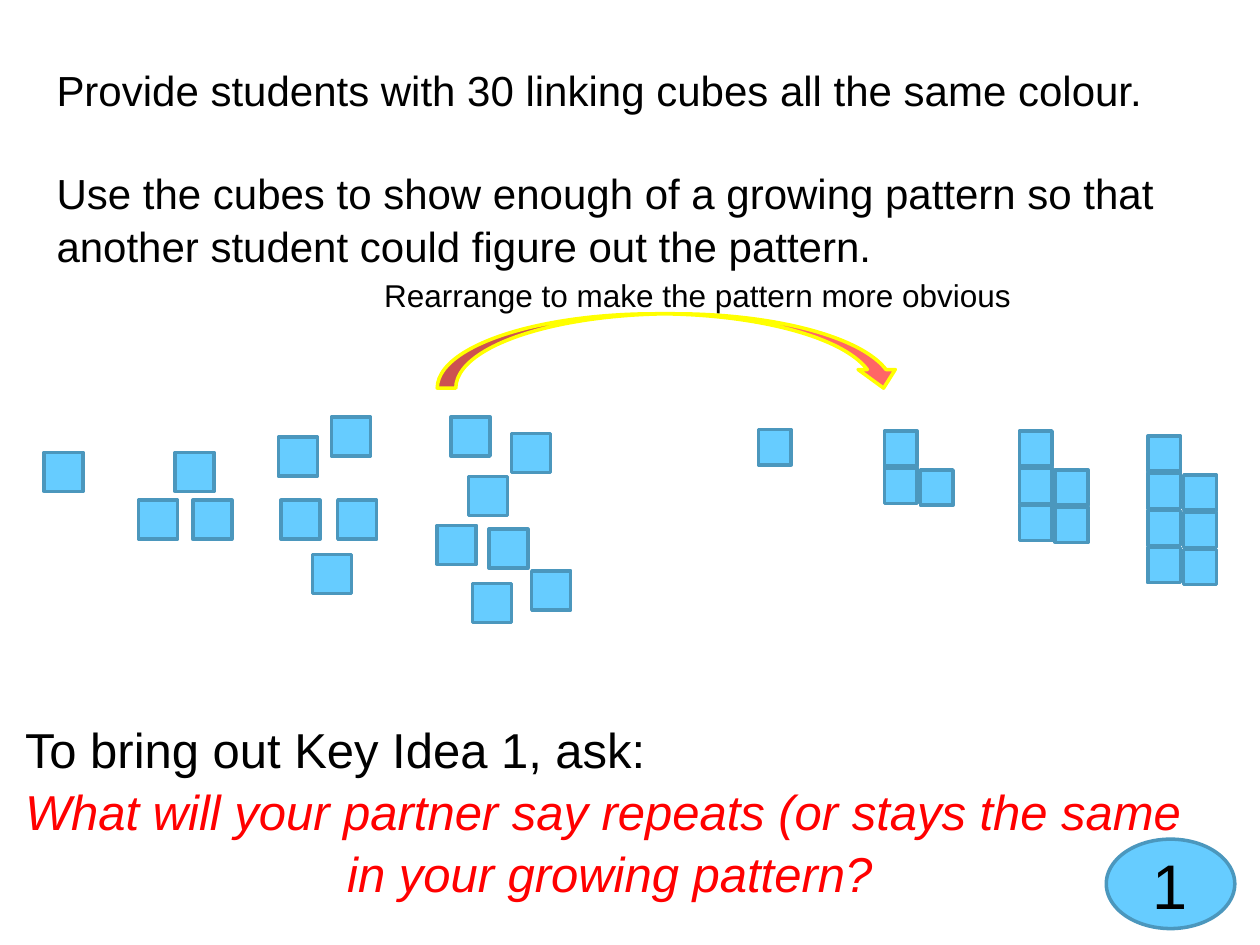
from dataclasses import dataclass

from pptx import Presentation
from pptx.dml.color import RGBColor
from pptx.enum.shapes import MSO_SHAPE
from pptx.enum.text import MSO_ANCHOR, MSO_AUTO_SIZE, PP_ALIGN
from pptx.slide import Slide
from pptx.util import Inches, Pt

RECT = MSO_SHAPE.RECTANGLE
OVAL = MSO_SHAPE.OVAL
ARROW = MSO_SHAPE.CURVED_DOWN_ARROW
LEFT = PP_ALIGN.LEFT
MID = PP_ALIGN.CENTER
CENTER = MSO_ANCHOR.MIDDLE
GROW = MSO_AUTO_SIZE.SHAPE_TO_FIT_TEXT

COLS, ROWS = 100, 75
HUES = {
    "ink": "000000",
    "ask": "FF0000",
    "cube": "66CCFF",
    "edge": "4B97BD",
    "arrow": "FF6666",
    "glow": "FFFF00",
}
LOOSE = [
    (3.5, 35.9),
    (13.9, 35.9), (11, 39.7), (15.3, 39.7),
    (22.1, 34.7), (22.3, 39.7), (26.8, 39.7), (26.3, 33.1), (24.8, 44),
    (35.8, 33.1), (37.2, 37.8), (34.7, 41.7), (38.8, 42),
    (40.6, 34.4), (37.5, 46.3), (42.2, 45.3),
]
STACKS = [(60.2, 34.1), (70.2, 34.2), (80.9, 34.2), (91.1, 34.6)]


def hue(name):
    return RGBColor.from_string(HUES[name])


def write(para, text, size=24, color="ink", italic=False, align=LEFT, gap=0, lead=1.05):
    para.alignment = align
    para.space_before = Pt(gap)
    para.line_spacing = lead
    run = para.add_run()
    run.text = text
    font = run.font
    font.name, font.size, font.italic = "Arial", Pt(size), italic
    font.color.rgb = hue(color)


@dataclass
class Board:
    """Draws styled parts on a slide, measured in grid columns and rows."""

    slide: Slide
    wide: int
    high: int
    line: float = 2

    def place(self, x, y, w, h):
        col, row = self.wide / COLS, self.high / ROWS
        return int(x * col), int(y * row), int(w * col), int(h * row)

    def shape(self, kind, x, y, w, h, fill="cube", edge="edge"):
        shape = self.slide.shapes.add_shape(kind, *self.place(x, y, w, h))
        shape.shadow.inherit = False
        shape.fill.solid()
        shape.fill.fore_color.rgb = hue(fill)
        shape.line.color.rgb = hue(edge)
        shape.line.width = Pt(self.line)
        return shape

    def text(self, x, y, w, h, *lines):
        frame = self.slide.shapes.add_textbox(*self.place(x, y, w, h)).text_frame
        frame.word_wrap = False
        frame.auto_size = GROW
        for i, (text, style) in enumerate(lines):
            para = frame.add_paragraph() if i else frame.paragraphs[0]
            write(para, text, **style)

    def badge(self, text, x, y, w, h):
        frame = self.shape(OVAL, x, y, w, h).text_frame
        frame.vertical_anchor = CENTER
        write(frame.paragraphs[0], text, size=36, align=MID, lead=1)

    def cube(self, x, y, w, h):
        self.shape(RECT, x, y, w, h)

    def stack(self, x, y, count):
        for row in range(count):
            self.cube(x, y + 2.95 * row, 2.6, 2.8)
            if row:
                self.cube(x + 2.85, y + 2.95 * row + 0.15, 2.6, 2.8)


def main():
    deck = Presentation()
    deck.slide_width, deck.slide_height = Inches(10), Inches(7.5)
    slide = deck.slides.add_slide(deck.slide_layouts[6])
    board = Board(slide, deck.slide_width, deck.slide_height)

    board.badge("1", 87.8, 66.6, 10.2, 7.1)
    board.text(
        3.5, 4.4, 90.9, 17.2,
        ("Provide students with 30 linking cubes all the same colour.", {}),
        ("Use the cubes to show enough of a growing pattern so that", {"gap": 29}),
        ("another student could figure out the pattern.", {}),
    )
    ask = {"size": 28, "color": "ask", "italic": True, "align": MID}
    board.text(
        1, 56.4, 99.2, 15.1,
        ("To bring out Key Idea 1, ask:", {"size": 28}),
        ("What will your partner say repeats (or stays the same", ask),
        (" in your growing pattern?", ask),
    )
    for count, (x, y) in enumerate(STACKS, 1):
        board.stack(x, y, count)
    for x, y in LOOSE:
        board.cube(x, y, 3.1, 3.1)
    board.text(
        29.5, 21.3, 52.2, 4,
        ("Rearrange to make the pattern more obvious", {"size": 18}),
    )
    board.shape(ARROW, 34.7, 24.9, 36.9, 5.9, "arrow", "glow")
    deck.save("out.pptx")


if __name__ == "__main__":
    main()
